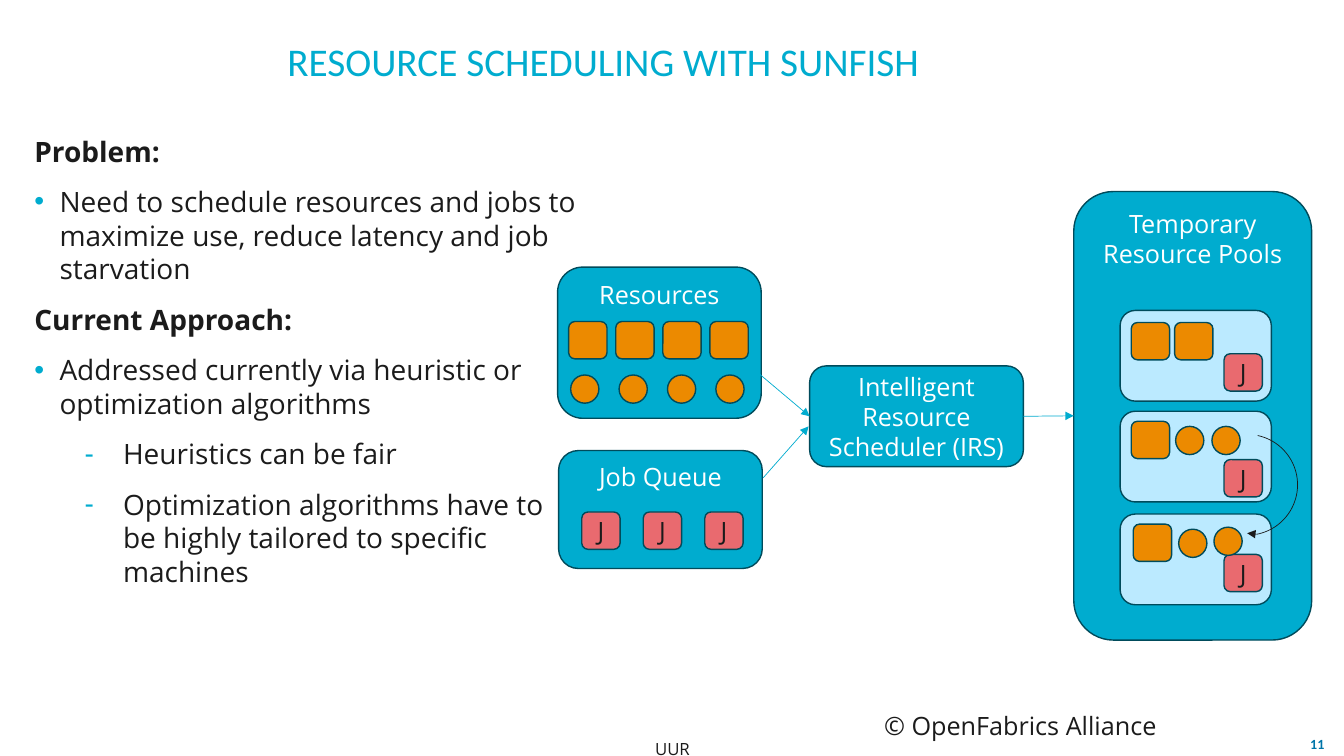
from lxml.etree import SubElement
from pptx import Presentation
from pptx.dml.color import RGBColor
from pptx.enum.shapes import MSO_CONNECTOR, MSO_SHAPE
from pptx.enum.text import MSO_ANCHOR, MSO_AUTO_SIZE, PP_ALIGN
from pptx.oxml.ns import qn
from pptx.util import Inches, Pt

COLORS = {"cyan": "00ACCF", "outline": "004B5B", "orange": "EC8A00", "red": "E96A6F",
          "pale": "BBEAFF", "ink": "1B1B1B", "white": "FFFFFF", "number": "0075A9"}
BODY_FONT, TITLE_FONT = "Open Sans", "Calibri"

TITLE = "RESOURCE SCHEDULING WITH SUNFISH"
# (kind, text)
BODY = [
    ("heading", "Problem:"),
    ("bullet", "Need to schedule resources and jobs to maximize use, reduce latency and job starvation"),
    ("heading", "Current Approach:"),
    ("bullet", "Addressed currently via heuristic or optimization algorithms"),
    ("dash", "Heuristics can be fair"),
    ("dash", "Optimization algorithms have to be highly tailored to specific machines"),
]
# kind: (bullet character, level, left margin, hanging indent)
BULLETS = {"bullet": ("•", 0, 0.25, -0.25), "dash": ("-", 1, 0.88, -0.38)}

# text, left, top, width, height, alignment, size, font, color, bold, anchor
NOTES = [
    ("11", 12.8, 7.26, 0.53, 0.24, PP_ALIGN.CENTER, 10, TITLE_FONT, "number", True, MSO_ANCHOR.MIDDLE),
    ("© OpenFabrics Alliance", 8.67, 7, 4.5, 0.4, PP_ALIGN.LEFT, 18, BODY_FONT, "ink", False, MSO_ANCHOR.TOP),
    ("UUR", 4.62, 7.28, 4.1, 0.29, PP_ALIGN.CENTER, 12, BODY_FONT, "ink", False, MSO_ANCHOR.TOP),
]

# name: (text, left, top, width, height, anchor)
PANELS = {
    "scheduler": ("Intelligent Resource Scheduler (IRS)", 8.03, 3.63, 2.12, 1, MSO_ANCHOR.MIDDLE),
    "resources": ("Resources", 5.53, 2.65, 2.02, 1.5, MSO_ANCHOR.TOP),
    "jobs": ("Job Queue", 5.54, 4.47, 2.02, 1.17, MSO_ANCHOR.TOP),
    "pools": ("Temporary Resource Pools", 10.65, 1.9, 2.36, 4.45, MSO_ANCHOR.TOP),
}
# token, left, top, pitch, count
TOKEN_ROWS = [("square", 5.64, 3.19, 0.467, 4), ("circle", 5.66, 3.72, 0.48, 4),
              ("job", 5.77, 5.08, 0.61, 3)]
# token: (shape, width, height, fill, text)
TOKENS = {
    "square": (MSO_SHAPE.ROUNDED_RECTANGLE, 0.38, 0.37, "orange", ""),
    "circle": (MSO_SHAPE.OVAL, 0.28, 0.28, "orange", ""),
    "job": (MSO_SHAPE.ROUNDED_RECTANGLE, 0.38, 0.37, "red", "J"),
}
POOL_LEFT, POOL_WIDTH, POOL_HEIGHT = 11.11, 1.5, 0.9
# pool top, tokens with their offsets inside the pool
POOLS = [
    (3.08, [("square", 0.11, 0.12), ("square", 0.54, 0.12), ("job", 1.03, 0.43)]),
    (4.08, [("square", 0.11, 0.1), ("circle", 0.55, 0.15), ("circle", 0.91, 0.15), ("job", 1.03, 0.48)]),
    (5.1, [("square", 0.13, 0.1), ("circle", 0.58, 0.15), ("job", 1.03, 0.4), ("circle", 0.93, 0.13)]),
]


def color(name):
    return RGBColor.from_string(COLORS[name])


def style(para, size, font, color_name, bold=False, align=None):
    para.alignment = align
    para.font.size, para.font.name, para.font.bold = Pt(size), font, bold
    para.font.color.rgb = color(color_name)


def place(shape, left, top, width, height):
    shape.left, shape.top, shape.width, shape.height = map(Inches, (left, top, width, height))


def set_frame(frame, anchor, inset):
    frame.word_wrap, frame.auto_size, frame.vertical_anchor = True, MSO_AUTO_SIZE.NONE, anchor
    frame.margin_left = frame.margin_right = frame.margin_top = frame.margin_bottom = Inches(inset)


def set_bullet(para, kind):
    props = para._p.get_or_add_pPr()
    if kind not in BULLETS:
        props.set("marL", "0")
        props.set("indent", "0")
        SubElement(props, qn("a:buNone"))
        return
    char, para.level, margin, indent = BULLETS[kind]
    props.set("marL", str(Inches(margin)))
    props.set("indent", str(Inches(indent)))
    SubElement(SubElement(props, qn("a:buClr")), qn("a:srgbClr"), val=COLORS["cyan"])
    SubElement(props, qn("a:buChar"), char=char)


def add_block(slide, kind, left, top, width, height, fill, text="", text_color="white",
              anchor=MSO_ANCHOR.MIDDLE):
    block = slide.shapes.add_shape(kind, *map(Inches, (left, top, width, height)))
    block.shadow.inherit = False
    block.fill.solid()
    block.fill.fore_color.rgb = color(fill)
    block.line.color.rgb = color("outline")
    block.line.width = Pt(1)
    if text:
        block.text_frame.text = text
        block.text_frame.vertical_anchor = anchor
        style(block.text_frame.paragraphs[0], 18, BODY_FONT, text_color, align=PP_ALIGN.CENTER)
    return block


def add_token(slide, token, left, top):
    kind, width, height, fill, text = TOKENS[token]
    add_block(slide, kind, left, top, width, height, fill, text, "ink")


def add_arrow(slide, start, end, color_name="cyan"):
    arrow = slide.shapes.add_connector(MSO_CONNECTOR.STRAIGHT, *map(Inches, start + end))
    arrow.line.color.rgb = color(color_name)
    arrow.line.width = Pt(0.5)
    SubElement(arrow.line._get_or_add_ln(), qn("a:tailEnd"), type="triangle")
    SubElement(arrow._element.spPr, qn("a:effectLst"))
    return arrow


def add_texts(slide):
    title, body = slide.placeholders[0], slide.placeholders[1]
    place(title, 0.39, 0.26, 11.18, 0.74)
    title.text_frame.text = TITLE
    set_frame(title.text_frame, MSO_ANCHOR.MIDDLE, 0)
    title.text_frame.paragraphs[0].line_spacing = 0.9
    style(title.text_frame.paragraphs[0], 28, TITLE_FONT, "cyan", align=PP_ALIGN.CENTER)

    place(body, 0.29, 1.28, 5.48, 5.46)
    set_frame(body.text_frame, MSO_ANCHOR.TOP, 0.05)
    body.text_frame.text = "\n".join(text for _, text in BODY)
    for index, (para, (kind, _)) in enumerate(zip(body.text_frame.paragraphs, BODY)):
        set_bullet(para, kind)
        para.space_before, para.space_after = Pt(6 if index else 0), Pt(6)
        style(para, 20, BODY_FONT, "ink", kind == "heading")

    for text, left, top, width, height, align, size, font, color_name, bold, anchor in NOTES:
        box = slide.shapes.add_textbox(*map(Inches, (left, top, width, height)))
        box.text_frame.word_wrap = True
        box.text_frame.vertical_anchor = anchor
        box.text_frame.text = text
        style(box.text_frame.paragraphs[0], size, font, color_name, bold, align)


def add_diagram(slide):
    rounded = MSO_SHAPE.ROUNDED_RECTANGLE
    panels = {name: add_block(slide, rounded, *area, "cyan", text, anchor=anchor)
              for name, (text, *area, anchor) in PANELS.items()}
    for token, left, top, pitch, count in TOKEN_ROWS:
        for index in range(count):
            add_token(slide, token, left + index * pitch, top)
    for pool_top, tokens in POOLS:
        add_block(slide, rounded, POOL_LEFT, pool_top, POOL_WIDTH, POOL_HEIGHT, "pale")
        for token, across, down in tokens:
            add_token(slide, token, POOL_LEFT + across, pool_top + down)

    add_arrow(slide, (7.57, 4.74), (8.02, 4.23))
    add_arrow(slide, (7.52, 3.7), (8.03, 4.13)).end_connect(panels["scheduler"], 1)
    to_pools = add_arrow(slide, (10.15, 4.13), (10.65, 4.13))
    to_pools.begin_connect(panels["scheduler"], 3)
    to_pools.end_connect(panels["pools"], 1)

    move = slide.shapes.add_shape(MSO_SHAPE.ARC, *map(Inches, (11.87, 4.31, 1, 1)))
    move.adjustments[0], move.adjustments[1] = 162, 40.3
    move.rotation = 12.1
    move.shadow.inherit = False
    move.fill.background()
    move.line.color.rgb = color("ink")
    move.line.width = Pt(0.5)
    add_arrow(slide, (12.46, 5.3), (12.37, 5.29), "ink")


def main():
    deck = Presentation()
    deck.slide_width, deck.slide_height = Inches(13.33), Inches(7.5)
    slide = deck.slides.add_slide(deck.slide_layouts[1])
    add_texts(slide)
    add_diagram(slide)
    deck.save("out.pptx")


if __name__ == "__main__":
    main()
